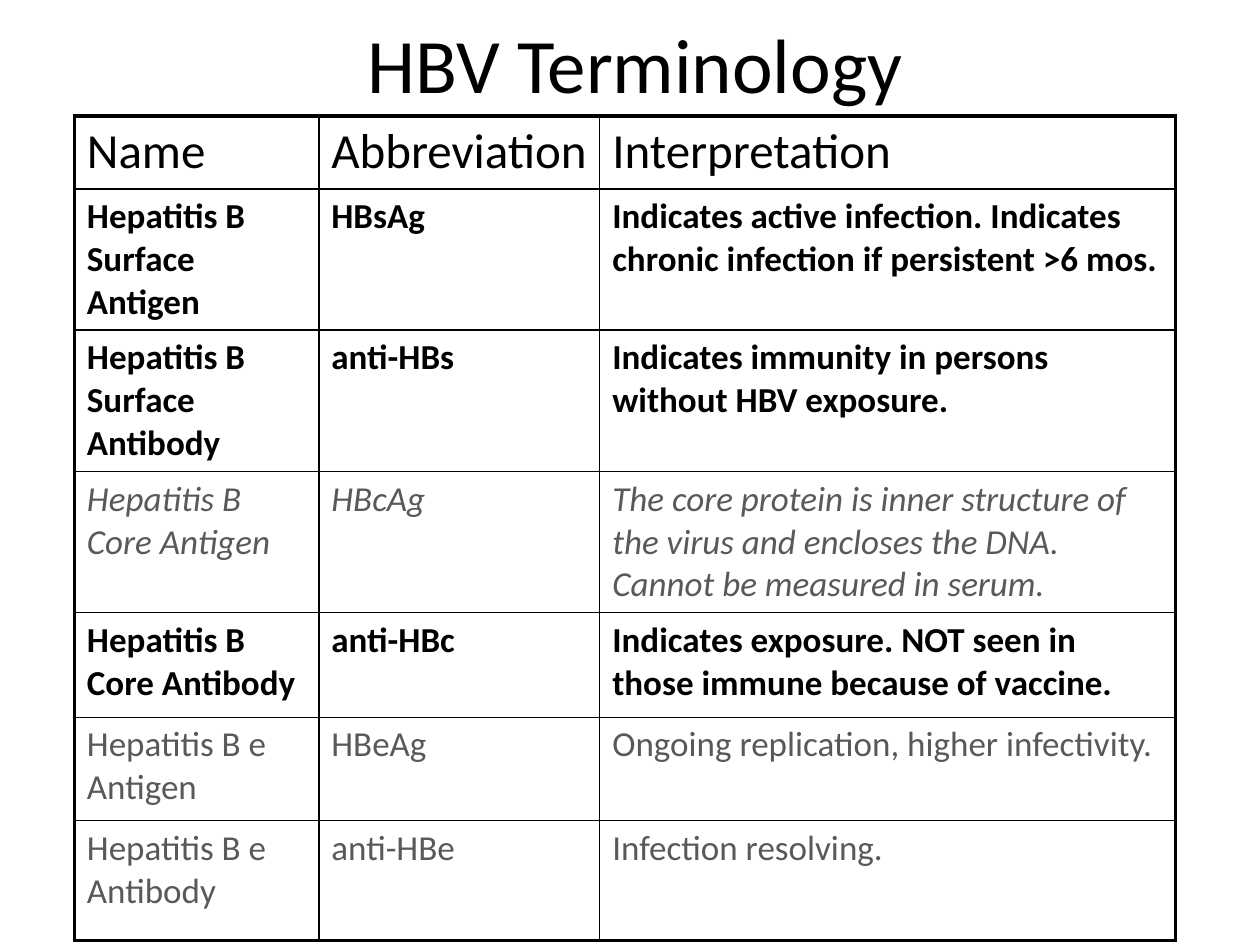
"""Builds a slide with a table of hepatitis B virus terminology."""
from dataclasses import dataclass

from lxml import etree
from pptx import Presentation
from pptx.dml.color import RGBColor
from pptx.enum.text import MSO_AUTO_SIZE, PP_ALIGN
from pptx.oxml.ns import qn
from pptx.util import Inches, Pt

CENTER = PP_ALIGN.CENTER
GROW = MSO_AUTO_SIZE.SHAPE_TO_FIT_TEXT
FONT = "Calibri"
BLACK = "000000"
GRAY = "595959"
OUTER_LINE = 2.25
INNER_LINE = 1
COLUMN_WIDTHS = (1.94, 2.23, 4.57)


@dataclass(frozen=True)
class Style:
    size: float
    color: str = BLACK
    bold: bool = False
    italic: bool = False


@dataclass(frozen=True)
class Term:
    name: str
    abbreviation: str
    interpretation: str
    height: float
    style: Style


TITLE = Style(44)
HEADING = Style(28)
KEY = Style(20, bold=True)
UNMEASURED = Style(20, GRAY, italic=True)
SECONDARY = Style(20, GRAY)

TERMS = (
    Term("Name", "Abbreviation", "Interpretation", 0.58, HEADING),
    Term("Hepatitis B Surface Antigen", "HBsAg",
         "Indicates active infection. Indicates chronic infection if persistent >6 mos.",
         1.08, KEY),
    Term("Hepatitis B Surface Antibody", "anti-HBs",
         "Indicates immunity in persons without HBV exposure.", 1.08, KEY),
    Term("Hepatitis B Core Antigen", "HBcAg",
         "The core protein is inner structure of the virus and encloses the DNA. "
         "Cannot be measured in serum.", 1.08, UNMEASURED),
    Term("Hepatitis B Core Antibody", "anti-HBc",
         "Indicates exposure. NOT seen in those immune because of vaccine.", 0.83, KEY),
    Term("Hepatitis B e Antigen", "HBeAg",
         "Ongoing replication, higher infectivity.", 0.82, SECONDARY),
    Term("Hepatitis B e Antibody", "anti-HBe", "Infection resolving.", 0.95, SECONDARY),
)


def rgb(value: str) -> RGBColor:
    """Return the colour for a hex string."""
    return RGBColor.from_string(value)


def add_run(paragraph, text: str, style: Style) -> None:
    """Add one styled run to a paragraph."""
    run = paragraph.add_run()
    run.text = text
    run.font.name = FONT
    run.font.size = Pt(style.size)
    run.font.bold = style.bold
    run.font.italic = style.italic
    run.font.color.rgb = rgb(style.color)


def add_border(cell, side: str, width: float) -> None:
    """Draw one solid black border of a cell."""
    properties = cell._tc.get_or_add_tcPr()
    line = etree.SubElement(properties, qn(f"a:ln{side}"), w=str(Pt(width)))
    fill = etree.SubElement(line, qn("a:solidFill"))
    etree.SubElement(fill, qn("a:srgbClr"), val=BLACK)


def add_title(slide, text: str) -> None:
    """Add the centred slide title."""
    title = slide.shapes.add_textbox(Inches(1.75), Inches(0.08), Inches(6.58), Inches(0.84))
    frame = title.text_frame
    frame.word_wrap = True
    frame.auto_size = GROW
    paragraph = frame.paragraphs[0]
    paragraph.alignment = CENTER
    add_run(paragraph, text, TITLE)


def add_term_table(slide, terms: tuple[Term, ...]) -> None:
    """Add the table of terms with a heavy outer frame."""
    last_row, last_column = len(terms) - 1, len(COLUMN_WIDTHS) - 1
    table = slide.shapes.add_table(
        len(terms), len(COLUMN_WIDTHS), Inches(0.59), Inches(0.92),
        Inches(sum(COLUMN_WIDTHS)), Inches(sum(term.height for term in terms))).table
    table.first_row = False
    table.horz_banding = False
    for column, width in zip(table.columns, COLUMN_WIDTHS):
        column.width = Inches(width)
    for row, term in enumerate(terms):
        table.rows[row].height = Inches(term.height)
        for column, text in enumerate((term.name, term.abbreviation, term.interpretation)):
            cell = table.cell(row, column)
            edges = {"L": column == 0, "R": column == last_column,
                     "T": row == 0, "B": row == last_row}
            for side, is_outer in edges.items():
                add_border(cell, side, OUTER_LINE if is_outer else INNER_LINE)
            cell.fill.background()
            add_run(cell.text_frame.paragraphs[0], text, term.style)


def main() -> None:
    """Build and save the slide."""
    presentation = Presentation()
    presentation.slide_width = Inches(10)
    presentation.slide_height = Inches(7.5)
    slide = presentation.slides.add_slide(presentation.slide_layouts[6])
    add_term_table(slide, TERMS)
    add_title(slide, "HBV Terminology")
    presentation.save("out.pptx")


if __name__ == "__main__":
    main()
